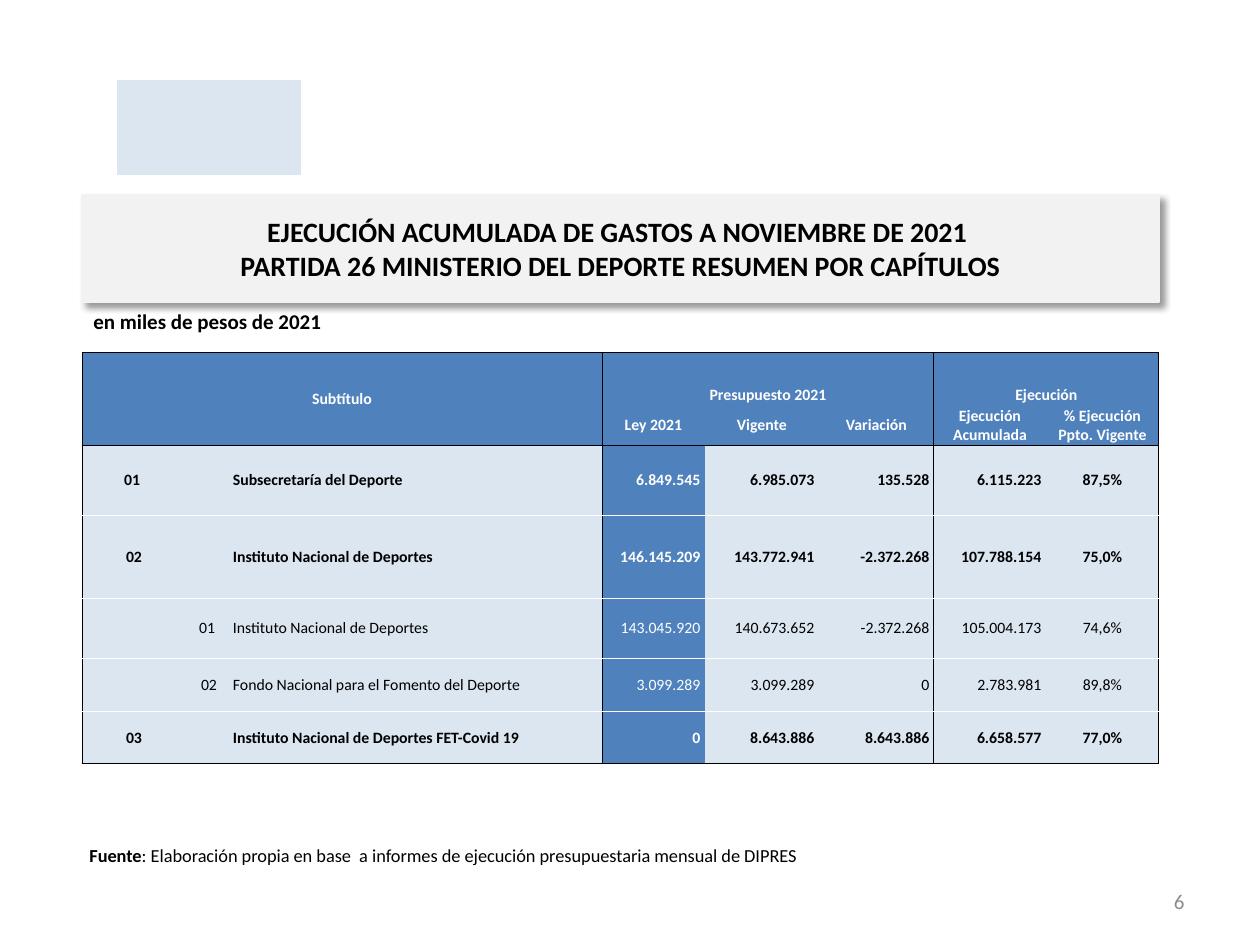
from lxml.etree import SubElement
from pptx import Presentation
from pptx.dml.color import RGBColor
from pptx.enum.shapes import MSO_SHAPE
from pptx.enum.text import MSO_ANCHOR, PP_ALIGN
from pptx.oxml import parse_xml
from pptx.oxml.ns import nsdecls, qn
from pptx.util import Pt

PX = 914400 // 126
BLACK = RGBColor(0x00, 0x00, 0x00)
WHITE = RGBColor(0xFF, 0xFF, 0xFF)
BLUE = RGBColor(0x4F, 0x81, 0xBD)
PALE_BLUE = RGBColor(0xDC, 0xE6, 0xF1)
PALE_GRAY = RGBColor(0xF2, 0xF2, 0xF2)
GRAY = RGBColor(0x8C, 0x8C, 0x8C)

COLUMN_WIDTHS = [104, 46, 370, 103, 114, 115, 112, 113]
ROW_HEIGHTS = [53, 40, 70, 83, 60, 53, 53]
GROUPS = [
    (0, 0, 1, 2, "Subtítulo"),
    (0, 3, 0, 5, "Presupuesto 2021"),
    (0, 6, 0, 7, "Ejecución"),
]
HEADINGS = ["", "", "", "Ley 2021", "Vigente", "Variación",
            "Ejecución Acumulada", "% Ejecución Ppto. Vigente"]
CHAPTERS = [
    ["01 ", "", "Subsecretaría del Deporte", "6.849.545 ", "6.985.073 ",
     "135.528 ", "6.115.223 ", "87,5%"],
    ["02", "", "Instituto Nacional de Deportes", "146.145.209 ", "143.772.941 ",
     "-2.372.268 ", "107.788.154 ", "75,0%"],
    ["", "01 ", "Instituto Nacional de Deportes", "143.045.920 ", "140.673.652 ",
     "-2.372.268 ", "105.004.173 ", "74,6%"],
    ["", "02", "Fondo Nacional para el Fomento del Deporte", "3.099.289 ",
     "3.099.289 ", "0 ", "2.783.981 ", "89,8%"],
    ["03", "", "Instituto Nacional de Deportes FET-Covid 19", "0 ", "8.643.886 ",
     "8.643.886 ", "6.658.577 ", "77,0%"],
]
ALIGNMENTS = [PP_ALIGN.CENTER] * 2 + [PP_ALIGN.JUSTIFY] + [PP_ALIGN.RIGHT] * 4 + [PP_ALIGN.CENTER]
LAW_COLUMN = 3
VERTICAL_EDGES = {0: BLACK, 3: BLACK, 6: BLACK, 8: BLACK}
HORIZONTAL_EDGES = {0: BLACK, 2: BLACK, 3: WHITE, 4: WHITE, 5: WHITE, 6: WHITE, 7: BLACK}


def scaled(box):
    return [length * PX for length in box]


def apply(target, **values):
    for name, value in values.items():
        setattr(target, name, value)


def write(paragraph, text, size, color=BLACK, align=PP_ALIGN.LEFT, **font):
    paragraph.alignment = align
    run = paragraph.add_run()
    run.text = text
    apply(run.font, **{"name": "Calibri", "size": Pt(size), **font})
    run.font.color.rgb = color


def add_emblem(slide, box):
    emblem = slide.shapes.add_shape(MSO_SHAPE.RECTANGLE, *scaled(box))
    emblem.shadow.inherit = False
    emblem.fill.solid()
    emblem.fill.fore_color.rgb = PALE_BLUE
    emblem.line.fill.background()


def add_title(slide, box):
    title = slide.shapes.title
    left, top, width, height = scaled(box)
    apply(title, left=left, top=top, width=width, height=height)
    title.fill.solid()
    title.fill.fore_color.rgb = PALE_GRAY
    title.line.color.rgb = PALE_GRAY
    title.line.width = Pt(0.75)
    title._element.spPr.append(parse_xml(
        f'<a:effectLst {nsdecls("a")}><a:outerShdw blurRad="50800" dist="38100" '
        'dir="2700000" algn="tl" rotWithShape="0"><a:srgbClr val="000000">'
        '<a:alpha val="40000"/></a:srgbClr></a:outerShdw></a:effectLst>'))
    apply(title.text_frame, word_wrap=True, vertical_anchor=MSO_ANCHOR.MIDDLE)
    heading = title.text_frame.paragraphs[0]
    style = {"size": 16, "align": PP_ALIGN.CENTER, "bold": True}
    write(heading, "EJECUCIÓN ACUMULADA DE GASTOS A NOVIEMBRE DE 2021 ", **style)
    heading.add_line_break()
    write(heading, "PARTIDA 26 MINISTERIO DEL DEPORTE RESUMEN POR CAPÍTULOS", **style)


def add_line_of_text(slide, box, parts, size, anchor=MSO_ANCHOR.TOP, **style):
    frame = slide.shapes.add_textbox(*scaled(box)).text_frame
    apply(frame, word_wrap=True, vertical_anchor=anchor)
    for text, bold in parts:
        write(frame.paragraphs[0], text, size, bold=bold, **style)


def set_borders(cell, row, column):
    edges = {
        "a:lnL": VERTICAL_EDGES.get(column),
        "a:lnR": VERTICAL_EDGES.get(column + cell.span_width),
        "a:lnT": HORIZONTAL_EDGES.get(row),
        "a:lnB": HORIZONTAL_EDGES.get(row + cell.span_height),
    }
    properties = cell._tc.get_or_add_tcPr()
    for position, (tag, color) in enumerate(edges.items()):
        border = SubElement(properties, qn(tag), w=str(Pt(0.5)))
        if color is None:
            SubElement(border, qn("a:noFill"))
        else:
            fill = SubElement(border, qn("a:solidFill"))
            SubElement(fill, qn("a:srgbClr"), val=str(color))
        properties.insert(position, border)


def fill_cell(cell, row, column, text, bold):
    heading = row < 2
    highlighted = heading or column == LAW_COLUMN
    apply(cell, margin_left=PX, margin_right=PX, margin_top=PX, margin_bottom=0,
          vertical_anchor=MSO_ANCHOR.MIDDLE)
    cell.fill.solid()
    cell.fill.fore_color.rgb = BLUE if highlighted else PALE_BLUE
    set_borders(cell, row, column)
    if text:
        write(cell.text_frame.paragraphs[0], text, 9, WHITE if highlighted else BLACK,
              PP_ALIGN.CENTER if heading else ALIGNMENTS[column], bold=bold)


def add_budget_table(slide, left, top):
    box = left, top, sum(COLUMN_WIDTHS), sum(ROW_HEIGHTS)
    budget = slide.shapes.add_table(len(ROW_HEIGHTS), len(COLUMN_WIDTHS), *scaled(box)).table
    apply(budget, first_row=False, horz_banding=False)
    for column, width in zip(budget.columns, COLUMN_WIDTHS):
        column.width = width * PX
    for row, height in zip(budget.rows, ROW_HEIGHTS):
        row.height = height * PX
    group_names = [""] * len(COLUMN_WIDTHS)
    for first_row, first_column, last_row, last_column, name in GROUPS:
        group_names[first_column] = name
        budget.cell(first_row, first_column).merge(budget.cell(last_row, last_column))
    for row, texts in enumerate([group_names, HEADINGS, *CHAPTERS]):
        for column, text in enumerate(texts):
            fill_cell(budget.cell(row, column), row, column, text, bold=not texts[1])
    for column in (3, 6):
        budget.cell(0, column).vertical_anchor = MSO_ANCHOR.BOTTOM


def main():
    presentation = Presentation()
    apply(presentation, slide_width=1260 * PX, slide_height=945 * PX)
    slide = presentation.slides.add_slide(presentation.slide_layouts[5])
    add_emblem(slide, (117, 80, 184, 95))
    add_title(slide, (82, 195, 1077, 107))
    add_line_of_text(slide, (903, 876, 294, 50), [("6", False)], 12, MSO_ANCHOR.MIDDLE,
                     color=GRAY, align=PP_ALIGN.RIGHT)
    add_line_of_text(slide, (77, 838, 1031, 39), [
        ("Fuente", True),
        (": Elaboración propia en base  a informes de ejecución presupuestaria mensual de DIPRES", False),
    ], 10.5)
    add_line_of_text(slide, (81, 302, 1034, 50), [("en miles de pesos de 2021", True)], 12)
    add_budget_table(slide, 82, 352)
    presentation.save("out.pptx")


if __name__ == "__main__":
    main()
